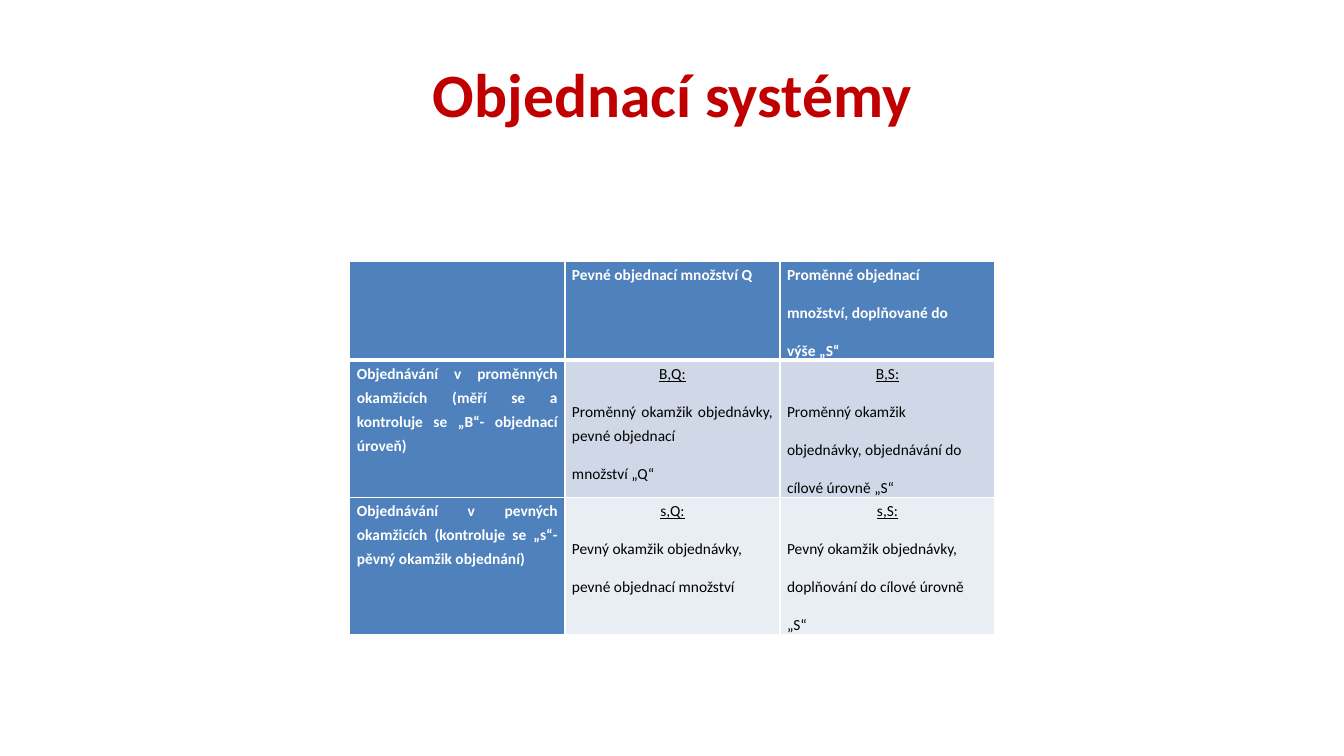
from dataclasses import dataclass

from lxml.etree import SubElement
from pptx import Presentation
from pptx.dml.color import RGBColor
from pptx.enum.text import MSO_ANCHOR, PP_ALIGN
from pptx.oxml.ns import qn
from pptx.util import Inches, Pt

FONT = "Calibri"
RED, WHITE, BLACK = "C00000", "FFFFFF", "000000"
BLUE, BAND_DARK, BAND_LIGHT = "4F81BD", "D0D8E8", "E9EDF4"
ROW_HEIGHTS = (0.98, 1.36, 1.36)
COL_WIDTH = 6.4 / 3


@dataclass
class CellText:
    lines: tuple[str, ...] = ()
    fill: str = BLUE
    code: str = ""

    @property
    def is_header(self) -> bool:
        return self.fill == BLUE


ROWS = (
    (
        CellText(),
        CellText(("Pevné objednací množství Q",)),
        CellText(("Proměnné objednací", "množství, doplňované do", "výše „S“")),
    ),
    (
        CellText(("Objednávání v proměnných okamžicích (měří se a kontroluje se „B“- objednací úroveň)",)),
        CellText(("Proměnný okamžik objednávky, pevné objednací", "množství „Q“"), BAND_DARK, "B,Q:"),
        CellText(("Proměnný okamžik", "objednávky, objednávání do", "cílové úrovně „S“"), BAND_DARK, "B,S:"),
    ),
    (
        CellText(("Objednávání v pevných okamžicích (kontroluje se „s“-pěvný okamžik objednání)",)),
        CellText(("Pevný okamžik objednávky,", "pevné objednací množství"), BAND_LIGHT, "s,Q:"),
        CellText(("Pevný okamžik objednávky,", "doplňování do cílové úrovně", "„S“"), BAND_LIGHT, "s,S:"),
    ),
)


def rgb(color: str) -> RGBColor:
    return RGBColor.from_string(color)


def add_run(p, text: str, size: float, color: str, bold: bool, underline: bool = False) -> None:
    r = p.add_run()
    r.text = text
    r.font.name = FONT
    r.font.size = Pt(size)
    r.font.color.rgb = rgb(color)
    r.font.bold = bold
    r.font.underline = underline


def set_borders(cell, top: float, bottom: float) -> None:
    tc_pr = cell._tc.get_or_add_tcPr()
    for side, width in (("L", 1), ("R", 1), ("T", top), ("B", bottom)):
        ln = SubElement(tc_pr, qn(f"a:ln{side}"), w=str(Pt(width)))
        fill = SubElement(ln, qn("a:solidFill"))
        SubElement(fill, qn("a:srgbClr"), val=WHITE)


def fill_cell(cell, content: CellText) -> None:
    cell.fill.solid()
    cell.fill.fore_color.rgb = rgb(content.fill)
    cell.margin_left = cell.margin_right = Inches(0.07)
    cell.margin_top = cell.margin_bottom = 0
    color = WHITE if content.is_header else BLACK
    lines = ((content.code,) if content.code else ()) + content.lines
    tf = cell.text_frame
    for i, line in enumerate(lines):
        p = tf.add_paragraph() if i else tf.paragraphs[0]
        is_code = line == content.code
        p.alignment = PP_ALIGN.CENTER if is_code else PP_ALIGN.JUSTIFY
        p.line_spacing = 1.25
        p.space_after = Pt(10)
        add_run(p, line, 11, color, content.is_header, is_code)


def add_title(s, text: str) -> None:
    title = s.shapes.title
    title.left, title.top = Inches(0.67), Inches(0.3)
    title.width, title.height = Inches(12), Inches(1.25)
    tf = title.text_frame
    tf.vertical_anchor = MSO_ANCHOR.MIDDLE
    p = tf.paragraphs[0]
    p.alignment = PP_ALIGN.CENTER
    add_run(p, text, 44, RED, True)


def add_systems_table(s) -> None:
    frame = s.shapes.add_table(
        len(ROWS), len(ROWS[0]), Inches(3.47), Inches(2.59),
        Inches(6.4), Inches(sum(ROW_HEIGHTS)),
    )
    table = frame.table
    table.first_col = True
    table.horz_banding = False
    for column in table.columns:
        column.width = Inches(COL_WIDTH)
    for i, (row, height) in enumerate(zip(ROWS, ROW_HEIGHTS)):
        table.rows[i].height = Inches(height)
        for j, content in enumerate(row):
            cell = table.cell(i, j)
            set_borders(cell, top=3 if i == 1 else 1, bottom=3 if i == 0 else 1)
            fill_cell(cell, content)


def main() -> None:
    prs = Presentation()
    prs.slide_width, prs.slide_height = Inches(13.33), Inches(7.5)
    s = prs.slides.add_slide(prs.slide_layouts[5])
    add_title(s, "Objednací systémy")
    add_systems_table(s)
    prs.save("out.pptx")


if __name__ == "__main__":
    main()
